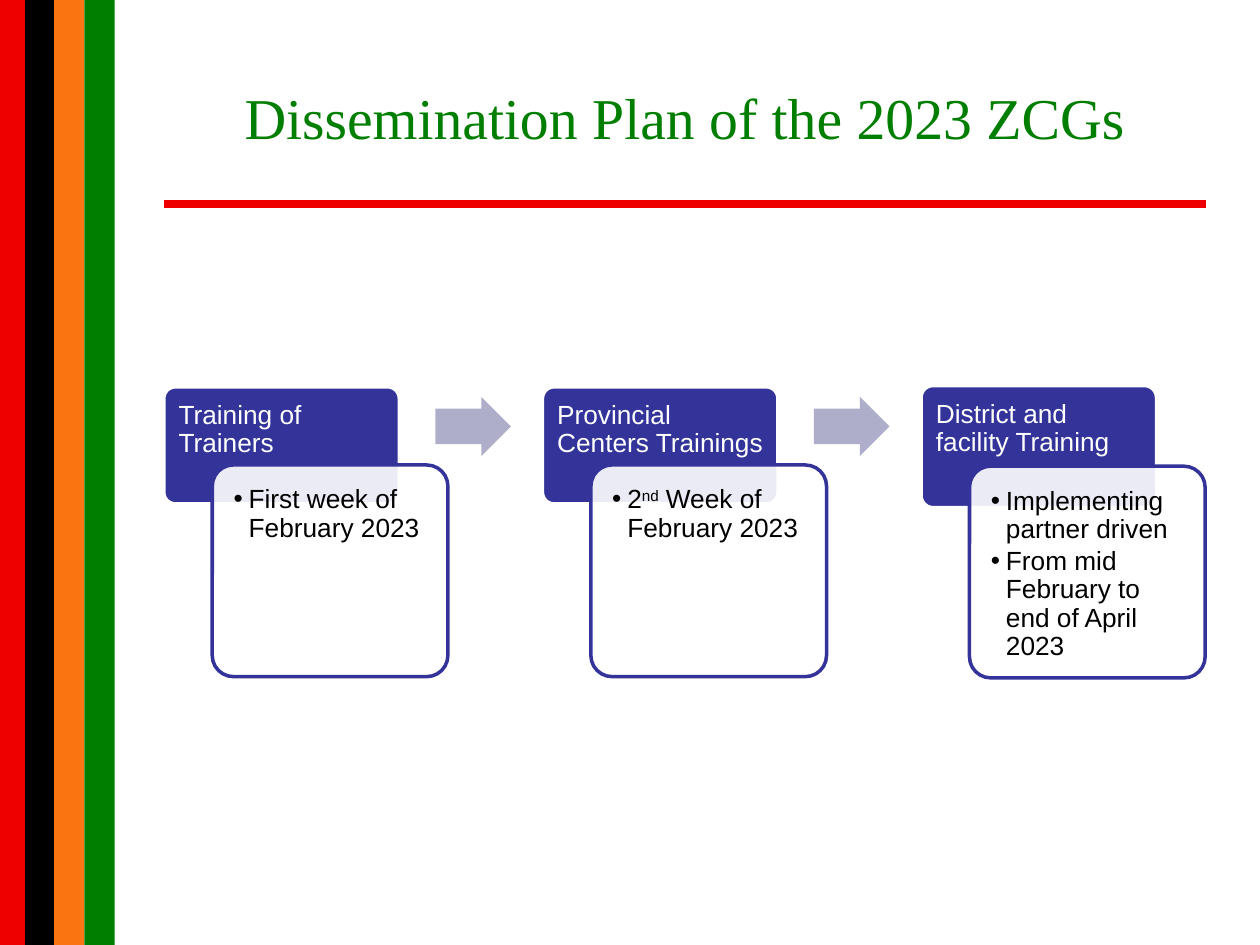
from lxml import etree
from pptx import Presentation
from pptx.dml.color import RGBColor
from pptx.enum import shapes, text
from pptx.oxml.ns import qn
from pptx.util import Inches, Pt

HUES = {"red": "EE0000", "black": "000000", "orange": "FA7512", "green": "007E00",
        "navy": "333399", "grey": "AEAECA", "white": "FFFFFF"}
KIND = shapes.MSO_SHAPE


def add_box(kind, x, y, w, h, fill, line=None):
    box = slide.shapes.add_shape(kind, Inches(x), Inches(y), Inches(w), Inches(h))
    box.shadow.inherit = False
    box.fill.solid()
    box.fill.fore_color.rgb = RGBColor.from_string(HUES[fill])
    if line:
        box.line.color.rgb = RGBColor.from_string(HUES[line])
        box.line.width = Pt(2)
    else:
        box.line.fill.background()
    return box


def write(box, paras, hue, inset, after):
    """Fill a box with paragraphs, each a list of (words, baseline) runs."""
    frame = box.text_frame
    frame.word_wrap = True
    frame.vertical_anchor = text.MSO_ANCHOR.TOP
    frame.margin_left = frame.margin_right = Inches(inset)
    frame.margin_top = frame.margin_bottom = Inches(inset)
    for i, runs in enumerate(paras):
        para = frame.paragraphs[0] if i == 0 else frame.add_paragraph()
        para.alignment = text.PP_ALIGN.LEFT
        para.line_spacing = 0.9
        para.space_after = Pt(after)
        for words, base in runs:
            run = para.add_run()
            run.text = words
            run.font.size = Pt(15)
            run.font.name = "Arial"
            run.font.color.rgb = RGBColor.from_string(HUES[hue])
            if base:
                run._r.get_or_add_rPr().set("baseline", str(base * 1000))


deck = Presentation()
deck.slide_width, deck.slide_height = Inches(10), Inches(7.5)
slide = deck.slides.add_slide(deck.slide_layouts[5])

# Flag stripes
for hue, x, w in [("red", 0, 0.2), ("black", 0.2, 0.24),
                  ("orange", 0.43, 0.24), ("green", 0.67, 0.24)]:
    add_box(KIND.RECTANGLE, x, 0, w, 7.5, hue)

# Title and rule
title = slide.shapes.title
title.left, title.top = Inches(1.3), Inches(0.3)
title.width, title.height = Inches(8.27), Inches(1.25)
title.text_frame.vertical_anchor = text.MSO_ANCHOR.MIDDLE
para = title.text_frame.paragraphs[0]
para.alignment = text.PP_ALIGN.CENTER
run = para.add_run()
run.text = "Dissemination Plan of the 2023 ZCGs"
run.font.size = Pt(33)
run.font.name = "Times New Roman"
run.font.color.rgb = RGBColor.from_string(HUES["green"])

rule = slide.shapes.add_connector(shapes.MSO_CONNECTOR.STRAIGHT, Inches(1.3),
                                  Inches(1.62), Inches(9.57), Inches(1.62))
rule.line.color.rgb = RGBColor.from_string(HUES["red"])
rule.line.width = Pt(4.5)
etree.SubElement(rule._element.spPr, qn("a:effectLst"))

# Steps: heading, its top and height, card top, card paragraphs
steps = [
    ("Training of Trainers", 3.07, 0.93, 3.69, [[("First week of February 2023", 0)]]),
    ("Provincial Centers Trainings", 3.07, 0.93, 3.69,
     [[("2", 0), ("nd", 30), (" Week of February 2023", 0)]]),
    ("District and facility Training", 3.06, 0.97, 3.7,
     [[("Implementing partner driven", 0)],
      [("From mid February to end of April 2023", 0)]]),
]
for i, (name, top, tall, low, points) in enumerate(steps):
    x = 1.3 + i * 3.005
    head = add_box(KIND.ROUNDED_RECTANGLE, x, top, 1.87, tall, "navy", "white")
    head.adjustments[0] = 0.1
    write(head, [[(name, 0)]], "white", 0.09, 0)

    card = add_box(KIND.ROUNDED_RECTANGLE, x + 0.385, low, 1.87, 1.68, "white", "navy")
    card.adjustments[0] = 0.1
    tint = card._element.spPr.find(qn("a:solidFill"))[0]
    etree.SubElement(tint, qn("a:alpha"), val="90000")
    write(card, points, "black", 0.12, 2)
    for para in card.text_frame.paragraphs:
        props = para._p.get_or_add_pPr()
        props.set("marL", str(Inches(0.12)))
        props.set("indent", str(-Inches(0.12)))
        etree.SubElement(props, qn("a:buFont"), typeface="Arial")
        etree.SubElement(props, qn("a:buChar"), char="•")

    if i < len(steps) - 1:
        arrow = add_box(KIND.RIGHT_ARROW, x + 2.155, 3.15, 0.6, 0.47, "grey")
        arrow.adjustments[0] = 0.6
        arrow.adjustments[1] = 0.5

deck.save("out.pptx")
